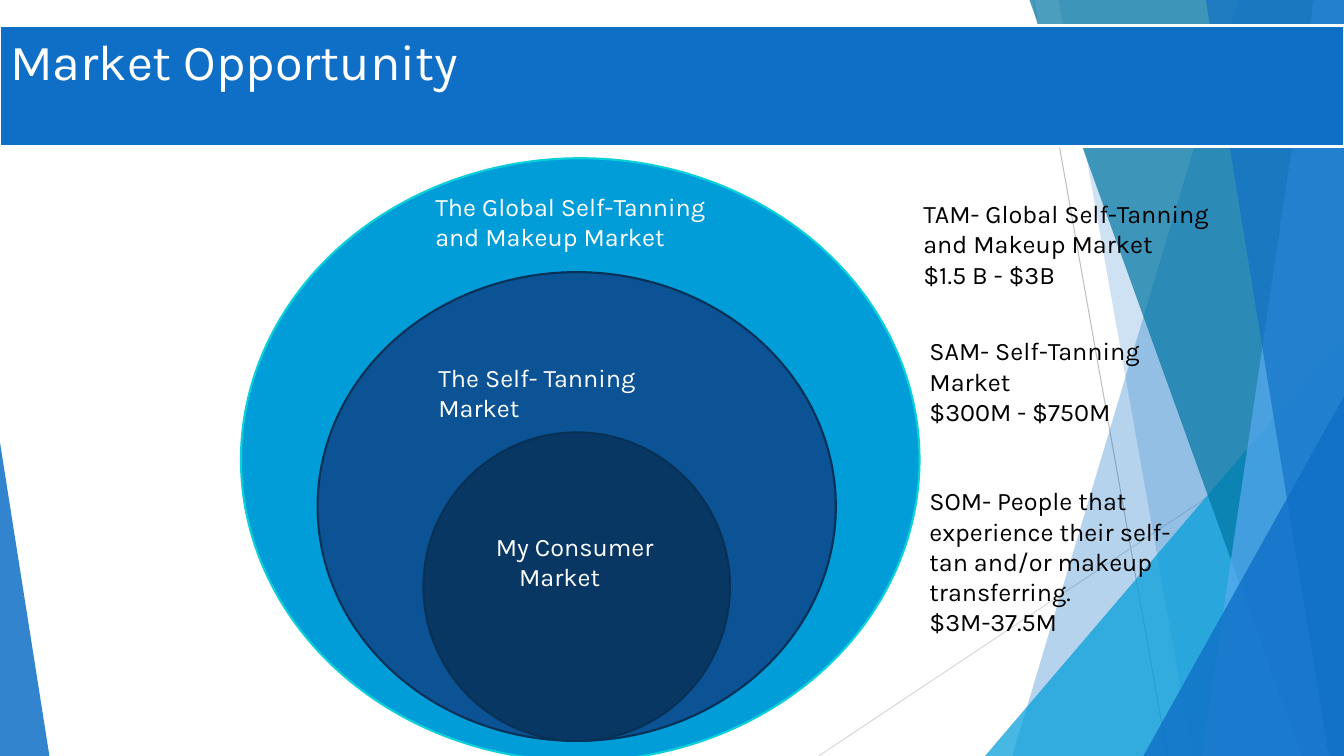
import pptx
import pptx.dml.color
import pptx.enum.shapes
import pptx.enum.text
import pptx.oxml
import pptx.oxml.ns
import pptx.util
from collections import namedtuple

Inches = pptx.util.Inches
Pt = pptx.util.Pt
Shape = pptx.enum.shapes.MSO_SHAPE
Box = namedtuple("Box", "left top width height")

FONT = "Karla"
COLORS = {
    "blue": "0F6FC6",
    "sky": "009DD9",
    "teal": "0076A3",
    "light blue": "59AAF2",
    "aqua": "0BD0D9",
    "mid navy": "0B5394",
    "navy": "083763",
    "navy line": "073157",
    "grey": "BFBFBF",
    "pale grey": "D9D9D9",
    "white": "FFFFFF",
    "black": "000000",
}


def color(name):
    return pptx.dml.color.RGBColor.from_string(COLORS[name])


def paint(shape, fill, line=None, width=1.5, opacity=100):
    """Set fill, outline and opacity (in percent), without a shadow."""
    shape.shadow.inherit = False
    shape.fill.solid()
    shape.fill.fore_color.rgb = color(fill)
    if opacity < 100:
        rgb = shape.fill._xPr.find(".//" + pptx.oxml.ns.qn("a:srgbClr"))
        alpha = pptx.oxml.parse_xml(
            f'<a:alpha {pptx.oxml.ns.nsdecls("a")} val="{opacity * 1000}"/>')
        rgb.append(alpha)
    if line:
        shape.line.color.rgb = color(line)
        shape.line.width = Pt(width)
    else:
        shape.line.fill.background()


def write(shape, *lines, size=18, font_color="black", indents=()):
    """Fill a shape with one paragraph per line; indents are inches per line."""
    frame = shape.text_frame
    frame.word_wrap = True
    frame.auto_size = pptx.enum.text.MSO_AUTO_SIZE.NONE
    frame.vertical_anchor = pptx.enum.text.MSO_ANCHOR.TOP
    frame.text = "\n".join(lines)
    for paragraph in frame.paragraphs:
        paragraph.alignment = pptx.enum.text.PP_ALIGN.LEFT
        paragraph.font.name = FONT
        paragraph.font.size = Pt(size)
        paragraph.font.color.rgb = color(font_color)
    for paragraph, indent in zip(frame.paragraphs, indents):
        paragraph._p.get_or_add_pPr().set("marL", str(Inches(indent)))


def add_label(slide, box, *lines, **text_format):
    label = slide.shapes.add_textbox(*map(Inches, box))
    write(label, *lines, **text_format)


def add_thin_line(slide, start, end, line_color):
    line = slide.shapes.add_connector(
        pptx.enum.shapes.MSO_CONNECTOR.STRAIGHT, *map(Inches, start + end))
    line.line.color.rgb = color(line_color)
    line.line.width = Pt(0.75)
    line._element.spPr.append(
        pptx.oxml.parse_xml(f'<a:effectLst {pptx.oxml.ns.nsdecls("a")}/>'))


def add_panel(slide, box, top_left, bottom_left, fill, opacity):
    """Add a full-height panel with a slanted left edge, up to the right edge."""
    right, bottom = box.left + box.width, box.top + box.height
    builder = slide.shapes.build_freeform(
        Inches(box.left + top_left), Inches(box.top))
    corners = [(right, box.top), (right, bottom), (box.left + bottom_left, bottom)]
    builder.add_line_segments([tuple(map(Inches, corner)) for corner in corners])
    paint(builder.convert_to_shape(), fill, opacity=opacity)


def add_wedge(slide, box, width, height, peak, fill, opacity):
    """Add a triangle in a bottom corner: peak 0 is the left one, 1 the right."""
    left = box.left + peak * (box.width - width)
    top = box.top + box.height - height
    wedge = slide.shapes.add_shape(
        Shape.ISOSCELES_TRIANGLE, *map(Inches, (left, top, width, height)))
    wedge.adjustments[0] = peak
    paint(wedge, fill, opacity=opacity)


def add_backdrop(slide, box):
    left, top, width, height = box
    add_thin_line(slide, (left + 10.25, top), (left + 11.58, top + height), "grey")
    add_thin_line(slide, (left + width, top + 4.03), (left + 8.12, top + height),
                  "pale grey")
    add_panel(slide, box, 12.28, 10.04, "blue", 30)
    add_panel(slide, box, 10.5, 11.83, "blue", 20)
    add_wedge(slide, box, 3.56, 4.17, 1, "sky", 72)
    add_panel(slide, box, 10.21, 12.91, "teal", 70)
    add_panel(slide, box, 13.03, 11.92, "light blue", 70)
    add_panel(slide, box, 11.96, 13.18, "blue", 65)
    add_wedge(slide, box, 1.99, 3.57, 1, "blue", 80)
    add_wedge(slide, box, 0.49, 3.11, 0, "blue", 85)


def add_title(slide, box):
    title = slide.shapes.title
    title.left, title.top, title.width, title.height = map(Inches, box)
    paint(title, "blue", "white", width=2)
    write(title, "Market Opportunity", size=36, font_color="white")
    title._element.getparent().append(title._element)  # in front of the backdrop


def add_market_circles(slide, box):
    circles = [
        (Shape.FLOWCHART_CONNECTOR, 0, 0, box.width, box.height, "sky", "aqua"),
        (Shape.FLOWCHART_CONNECTOR, 0.76, 1.13, 5.14, 4.65, "mid navy", "navy line"),
        (Shape.OVAL, 1.81, 2.72, 3.04, 3.06, "navy", "navy line"),
    ]
    for kind, left, top, width, height, fill, line in circles:
        circle = slide.shapes.add_shape(kind, *map(
            Inches, (box.left + left, box.top + top, width, height)))
        paint(circle, fill, line)
    labels = [
        (2.43, 3.65, 1.85, ("My Consumer", "Market"), (0, 0.23)),
        (1.86, 1.97, 2.8, ("The Self- Tanning Market",), ()),
        (1.83, 0.28, 3.06, ("The Global Self-Tanning and Makeup Market",), ()),
    ]
    for left, top, width, lines, indents in labels:
        add_label(slide, (box.left + left, box.top + top, width, 0.71), *lines,
                  font_color="white", indents=indents)


def add_market_sizes(slide, box):
    notes = [
        (0, 0, 3.34, 1.01, "TAM- Global Self-Tanning and Makeup Market", "$1.5 B - $3B"),
        (0.06, 1.36, 2.95, 1.01, "SAM- Self-Tanning Market", "$300M - $750M"),
        (0.06, 2.85, 2.95, 1.62, "SOM- People that experience their self-tan "
         "and/or makeup transferring.", "$3M-37.5M"),
    ]
    for left, top, width, height, market, value in notes:
        add_label(slide, (box.left + left, box.top + top, width, height), market, value)


def main():
    presentation = pptx.Presentation()
    presentation.slide_width = Inches(13.33)
    presentation.slide_height = Inches(7.5)
    slide = presentation.slides.add_slide(presentation.slide_layouts[5])
    add_backdrop(slide, Box(0, 0, 13.33, 7.5))
    add_title(slide, Box(0, 0.25, 13.33, 1.2))
    add_market_circles(slide, Box(2.39, 1.57, 6.73, 5.98))
    add_market_sizes(slide, Box(9.06, 1.92, 3.34, 4.47))
    presentation.save("out.pptx")


if __name__ == "__main__":
    main()
